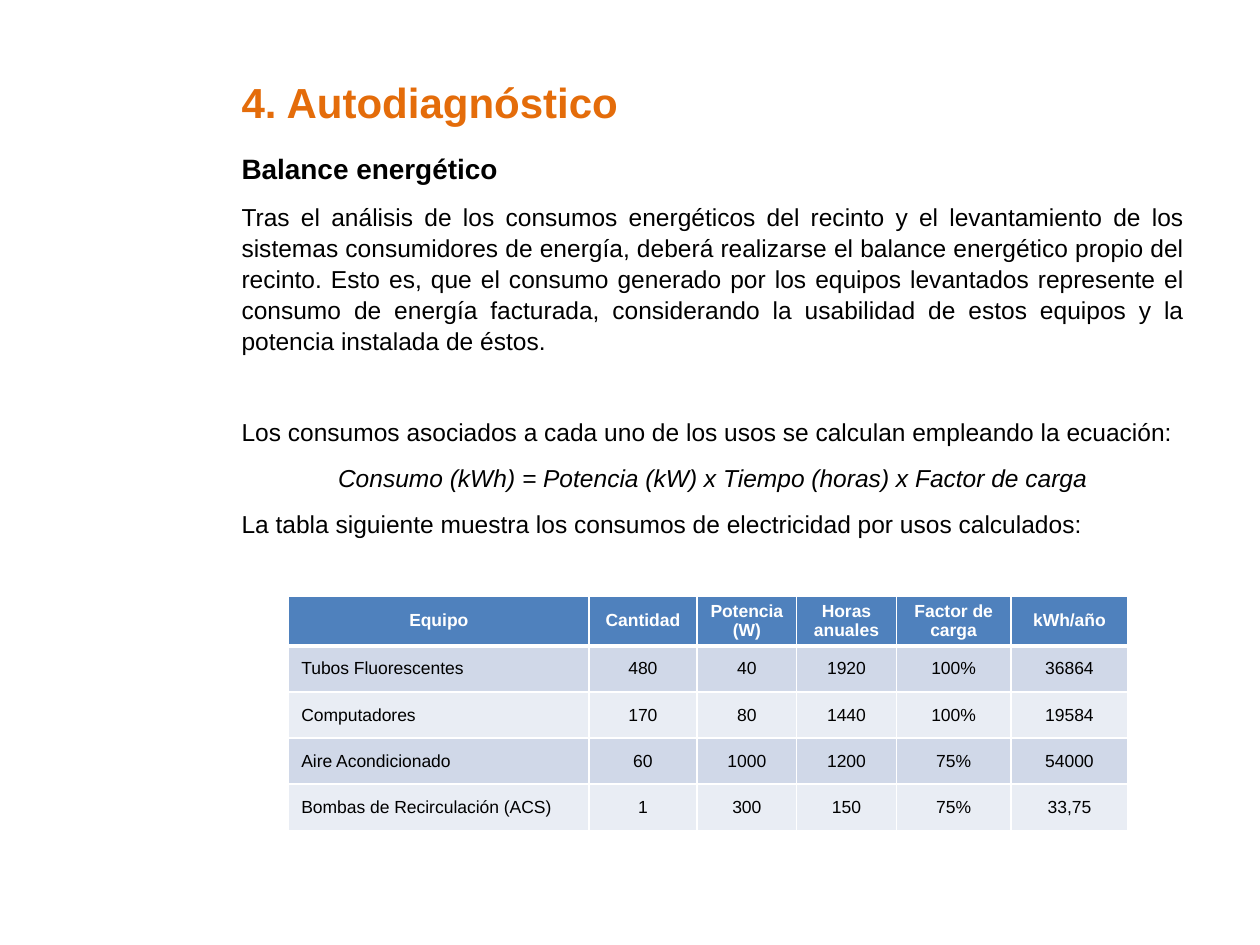
from dataclasses import dataclass
from typing import Any

import pptx
import pptx.dml.color
import pptx.enum.text
import pptx.oxml
import pptx.oxml.ns
import pptx.util

Cm = pptx.util.Cm
Pt = pptx.util.Pt
Align = pptx.enum.text.PP_ALIGN
Anchor = pptx.enum.text.MSO_ANCHOR

COLORS = {
    "title": "E46C0A",
    "text": "000000",
    "white": "FFFFFF",
    "header": "4F81BD",
    "odd_row": "D0D8E8",
    "even_row": "E9EDF4",
}
FONT = "Arial"
LINE_SPACING = 1.05
SPACE_AFTER = 6
SPACE_BEFORE = 2.8
SECTION_GAP = 28.5


@dataclass
class BodyText:
    text: str
    size: float = 14
    bold: bool = False
    italic: bool = False
    align: Any = Align.JUSTIFY
    before: float = SPACE_BEFORE


@dataclass
class Column:
    heading: str
    width: float
    align: Any = Align.CENTER


BODY = [
    BodyText("Balance energético", size=16, bold=True, before=0),
    BodyText(
        "Tras el análisis de los consumos energéticos del recinto y el levantamiento "
        "de los sistemas consumidores de energía, deberá realizarse el balance "
        "energético propio del recinto. Esto es, que el consumo generado por los "
        "equipos levantados represente el consumo de energía facturada, considerando "
        "la usabilidad de estos equipos y la potencia instalada de éstos."
    ),
    BodyText(
        "Los consumos asociados a cada uno de los usos se calculan empleando la ecuación:",
        before=SECTION_GAP,
    ),
    BodyText(
        "Consumo (kWh) = Potencia (kW) x Tiempo (horas) x Factor de carga",
        italic=True,
        align=Align.CENTER,
    ),
    BodyText("La tabla siguiente muestra los consumos de electricidad por usos calculados:"),
]
COLUMNS = [
    Column("Equipo", 6.05, Align.LEFT),
    Column("Cantidad", 2.18),
    Column("Potencia (W)", 2.01),
    Column("Horas anuales", 2.01),
    Column("Factor de carga", 2.31),
    Column("kWh/año", 2.36),
]
EQUIPMENT = [
    ["Tubos Fluorescentes", "480", "40", "1920", "100%", "36864"],
    ["Computadores", "170", "80", "1440", "100%", "19584"],
    ["Aire Acondicionado", "60", "1000", "1200", "75%", "54000"],
    ["Bombas de Recirculación (ACS)", "1", "300", "150", "75%", "33,75"],
]
HEADER_HEIGHT = 0.99
ROW_HEIGHT = 0.93


def write_text(paragraph, text: str, *, size: float, color: str = "text",
               bold: bool = False, italic: bool = False, align=Align.LEFT,
               before: float = 0, after: float = 0, spacing: float = 1.0) -> None:
    paragraph.alignment = align
    paragraph.space_before = Pt(before)
    paragraph.space_after = Pt(after)
    paragraph.line_spacing = spacing
    run = paragraph.add_run()
    run.text = text
    run.font.name = FONT
    run.font.size = Pt(size)
    run.font.bold = bold
    run.font.italic = italic
    run.font.color.rgb = pptx.dml.color.RGBColor.from_string(COLORS[color])


def add_text_frame(slide, left: float, top: float, width: float, height: float):
    shape = slide.shapes.add_textbox(Cm(left), Cm(top), Cm(width), Cm(height))
    shape.text_frame.word_wrap = True
    return shape.text_frame


def set_borders(cell, widths: dict[str, float]) -> None:
    properties = cell._tc.get_or_add_tcPr()
    for index, (side, width) in enumerate(widths.items()):
        border = pptx.oxml.parse_xml(
            f'<a:ln{side} {pptx.oxml.ns.nsdecls("a")} w="{Pt(width)}"><a:solidFill>'
            f'<a:srgbClr val="{COLORS["white"]}"/></a:solidFill></a:ln{side}>'
        )
        properties.insert(index, border)


def add_body(slide) -> None:
    frame = add_text_frame(slide, 4.62, 2.9, 19.51, 15.85)
    for index, item in enumerate(BODY):
        paragraph = frame.add_paragraph() if index else frame.paragraphs[0]
        write_text(paragraph, item.text, size=item.size, bold=item.bold,
                   italic=item.italic, align=item.align, before=item.before,
                   after=SPACE_AFTER, spacing=LINE_SPACING)


def add_equipment_table(slide) -> None:
    rows = [[column.heading for column in COLUMNS], *EQUIPMENT]
    width = sum(column.width for column in COLUMNS)
    height = HEADER_HEIGHT + ROW_HEIGHT * len(EQUIPMENT)
    table = slide.shapes.add_table(
        len(rows), len(COLUMNS), Cm(5.82), Cm(12.01), Cm(width), Cm(height)
    ).table
    for table_column, column in zip(table.columns, COLUMNS):
        table_column.width = Cm(column.width)
    for row_index, values in enumerate(rows):
        header = row_index == 0
        fill = "header" if header else "odd_row" if row_index % 2 else "even_row"
        table.rows[row_index].height = Cm(HEADER_HEIGHT if header else ROW_HEIGHT)
        for column_index, (value, column) in enumerate(zip(values, COLUMNS)):
            cell = table.cell(row_index, column_index)
            cell.vertical_anchor = Anchor.MIDDLE
            cell.margin_top = cell.margin_bottom = Cm(0.08)
            cell.fill.solid()
            cell.fill.fore_color.rgb = pptx.dml.color.RGBColor.from_string(COLORS[fill])
            set_borders(cell, {"L": 1, "R": 1, "T": 3 if row_index == 1 else 1,
                               "B": 3 if header else 1})
            write_text(cell.text_frame.paragraphs[0], value, size=10, bold=header,
                       color="white" if header else "text",
                       align=Align.CENTER if header else column.align)


def main() -> None:
    presentation = pptx.Presentation()
    presentation.slide_width = Cm(25.4)
    presentation.slide_height = Cm(19.05)
    slide = presentation.slides.add_slide(presentation.slide_layouts[6])
    add_body(slide)
    title = add_text_frame(slide, 4.62, 1.37, 18.26, 1.14)
    write_text(title.paragraphs[0], "4. Autodiagnóstico", size=24, color="title",
               bold=True, spacing=LINE_SPACING)
    add_equipment_table(slide)
    presentation.save("out.pptx")


if __name__ == "__main__":
    main()
